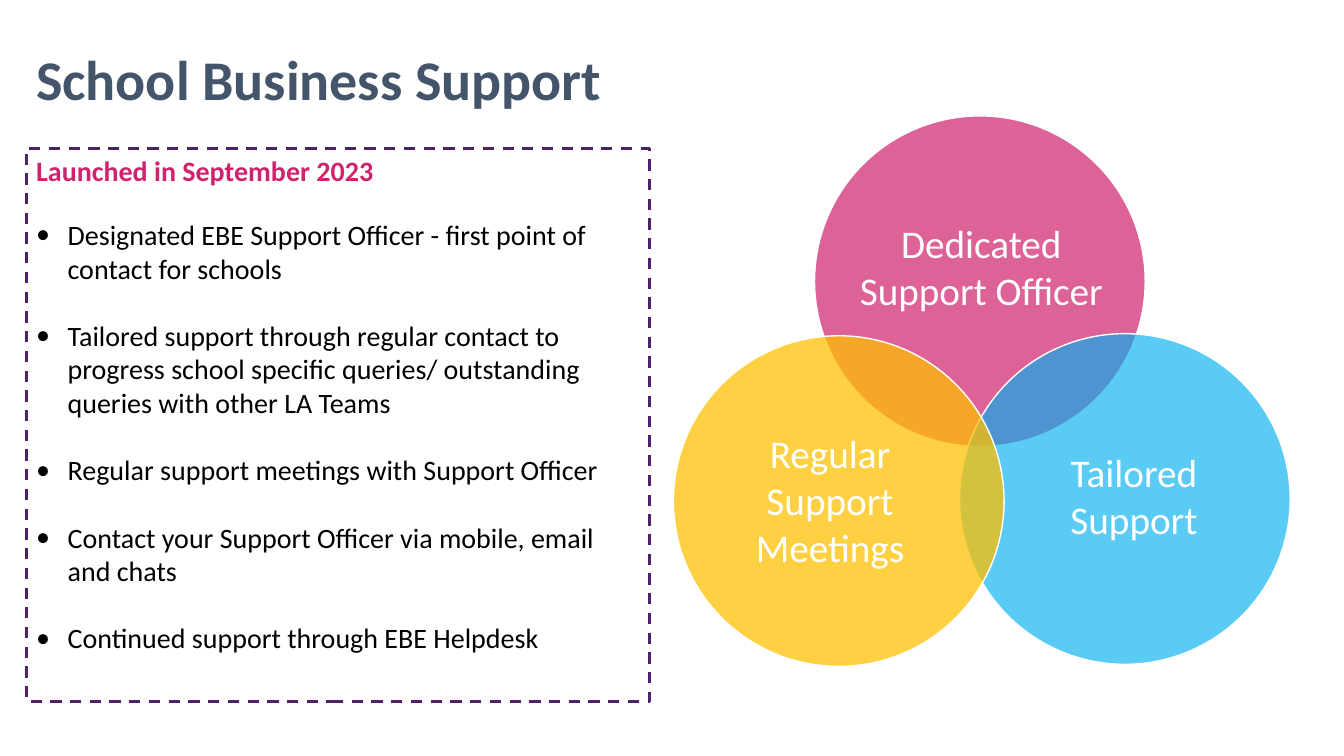
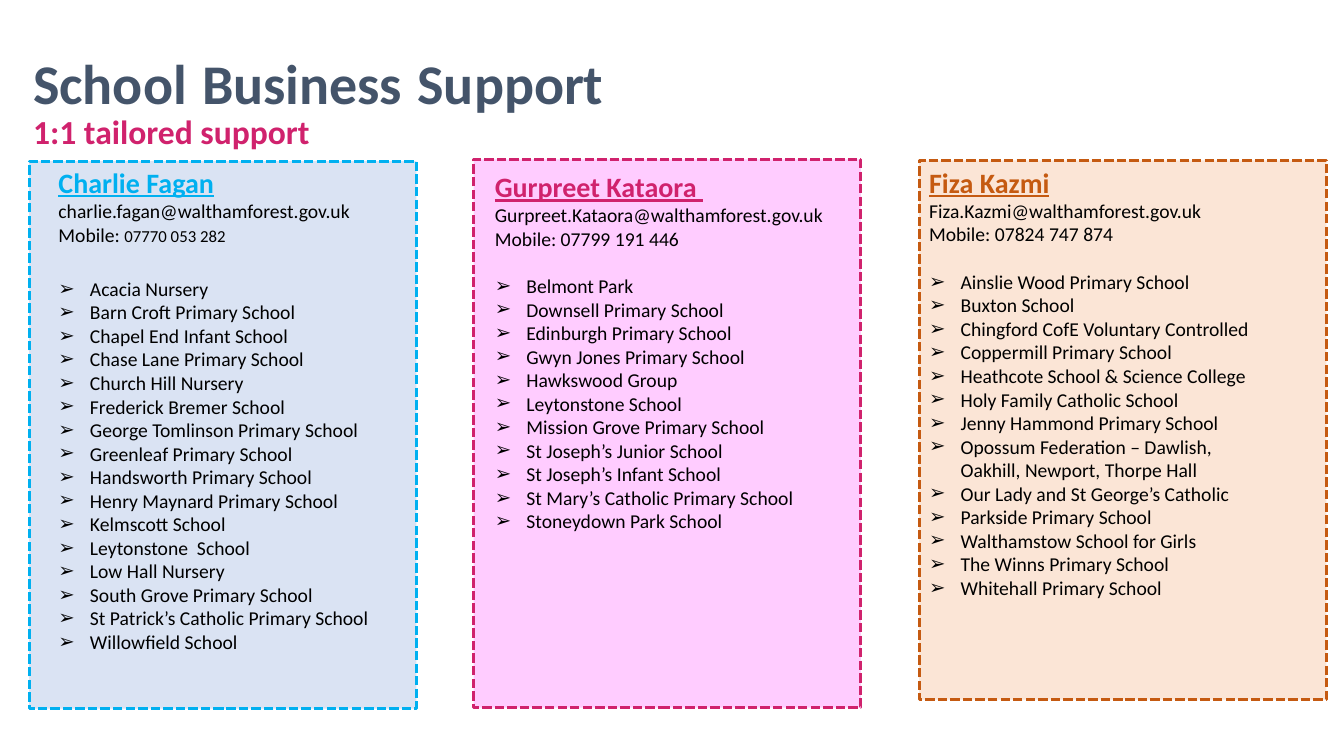
"""Build two slides on the School Business Support service and its officers."""
from dataclasses import dataclass

from lxml.etree import SubElement
from pptx import Presentation
from pptx.dml.color import RGBColor as RGB
from pptx.enum.dml import MSO_LINE as Dash
from pptx.enum.shapes import MSO_SHAPE as Preset
from pptx.enum.text import MSO_ANCHOR as Anchor, PP_ALIGN as Align
from pptx.oxml.ns import qn
from pptx.util import Pt


@dataclass(frozen=True)
class Theme:
    font: str = "Calibri"
    slate: str = "44546A"
    pink: str = "D0226D"
    blue: str = "00B0F0"
    yellow: str = "FFC000"
    purple: str = "4E226B"
    orange: str = "C55A11"
    pale_blue: str = "DAE3F3"
    pale_pink: str = "FFCCFF"
    pale_orange: str = "FBE5D6"
    white: str = "FFFFFF"
    black: str = "000000"
    title: int = 40
    title_gap: int = 48
    label: int = 28
    subtitle: int = 24
    body: int = 20
    contact: int = 14
    small: int = 12
    indent: float = 22.5


theme = Theme()


def write(frame, lines, anchor=Anchor.TOP):
    """Fill a frame with (runs, paragraph format, bullet) lines."""
    frame.word_wrap = True
    frame.vertical_anchor = anchor
    for index, (runs, paragraph_format, bullet) in enumerate(lines):
        paragraph = frame.paragraphs[0] if index == 0 else frame.add_paragraph()
        if bullet:
            properties = paragraph._p.get_or_add_pPr()
            properties.set("marL", str(Pt(theme.indent)))
            properties.set("indent", str(-Pt(theme.indent)))
            SubElement(properties, qn("a:buFont"), typeface=theme.font)
            SubElement(properties, qn("a:buChar"), char=bullet)
        for name, value in {"alignment": Align.LEFT, **paragraph_format}.items():
            setattr(paragraph, name, value)
        for text, size, color, font_format in runs:
            run = paragraph.add_run()
            run.text = text
            run.font.color.rgb = RGB.from_string(color)
            for name, value in {"name": theme.font, "size": Pt(size), **font_format}.items():
                setattr(run.font, name, value)


def draw(slide, preset, box, fill, line, width, dash=None):
    """Add a preset shape with an optional fill."""
    shape = slide.shapes.add_shape(preset, *map(Pt, box))
    shape.shadow.inherit = False
    if fill:
        shape.fill.solid()
        shape.fill.fore_color.rgb = RGB.from_string(fill)
    else:
        shape.fill.background()
    shape.line.color.rgb = RGB.from_string(line)
    shape.line.width = Pt(width)
    if dash:
        shape.line.dash_style = dash
    return shape


deck = Presentation()
deck.slide_width, deck.slide_height = Pt(960), Pt(540)
blank = deck.slide_layouts[6]
bold = {"bold": True}

overview, officers = [deck.slides.add_slide(blank) for _ in range(2)]
for slide, left, top, gap in (
    (overview, 18.7, 8.6, theme.title),
    (officers, 16.6, 9.4, theme.title_gap),
):
    title = slide.shapes.add_textbox(Pt(left), Pt(top), Pt(823.7), Pt(100))
    words = [
        (text, gap if text == " " else theme.title, theme.slate, bold)
        for text in ("School", " ", "Business", " ", "Support")
    ]
    write(title.text_frame, [(words, {"line_spacing": 0.9}, None)], Anchor.MIDDLE)

diameter = 236.2
for left, top, color, opacity in (
    (581.8, 82.8, theme.pink, 71),
    (685.4, 238.3, theme.blue, 65),
    (481, 239.8, theme.yellow, 74),
):
    circle = draw(overview, Preset.OVAL, (left, top, diameter, diameter), color, theme.white, 1)
    tint = next(circle._element.spPr.iter(qn("a:srgbClr")))
    SubElement(tint, qn("a:alpha"), val=str(opacity * 1000))

for box, label_lines in (
    ((592.6, 153.4, 216.7, 74.9), ["Dedicated Support Officer"]),
    ((496.8, 303.1, 192.2, 108.7), ["Regular Support Meetings"]),
    ((738, 316.8, 144, 74.9), ["Tailored", "Support"]),
):
    label = overview.shapes.add_textbox(*map(Pt, box))
    write(label.text_frame, [
        ([(text, theme.label, theme.white, {})], {"alignment": Align.CENTER}, None)
        for text in label_lines
    ])

offer = draw(overview, Preset.RECTANGLE, (18.7, 105.8, 445, 395.3), None, theme.purple, 2, Dash.DASH)
services = [
    "Designated EBE Support Officer - first point of contact for schools",
    "Tailored support through regular contact to progress school specific queries/ "
    "outstanding queries with other LA Teams",
    "Regular support meetings with Support Officer",
    "Contact your Support Officer via mobile, email and chats",
    "Continued support through EBE Helpdesk",
]
launch = ([("Launched in September 2023", theme.body, theme.pink, bold)], {}, None)
write(offer.text_frame, [launch] + [
    ([(text, theme.body, theme.black, {})], {"space_before": Pt(24 if index else 22)}, "•")
    for index, text in enumerate(services)
])

subtitle = officers.shapes.add_textbox(Pt(16.6), Pt(75.6), Pt(576), Pt(36))
write(subtitle.text_frame, [([("1:1 tailored support", theme.subtitle, theme.pink, bold)], {}, None)])

caseloads = [
    {
        "box": (20.9, 115.2, 276.5, 391), "inset": (20.9, 2.9, 7.2), "gap": 22,
        "fill": theme.pale_blue, "accent": theme.blue,
        "name": "Charlie Fagan", "email": "charlie.fagan@walthamforest.gov.uk",
        "mobile": "07770 053 282", "mobile_size": theme.small,
        "schools": [
            "Acacia Nursery", "Barn Croft Primary School", "Chapel End Infant School",
            "Chase Lane Primary School", "Church Hill Nursery", "Frederick Bremer School",
            "George Tomlinson Primary School", "Greenleaf Primary School",
            "Handsworth Primary School", "Henry Maynard Primary School", "Kelmscott School",
            "Leytonstone  School", "Low Hall Nursery", "South Grove Primary School",
            "St Patrick’s Catholic Primary School", "Willowfield School",
        ],
    },
    {
        "box": (338.4, 113.8, 276.5, 391.7), "inset": (15.1, 7.2, 7.2), "gap": 17,
        "fill": theme.pale_pink, "accent": theme.pink,
        "name": "Gurpreet Kataora ", "email": "Gurpreet.Kataora@walthamforest.gov.uk",
        "mobile": "07799 191 446", "mobile_size": theme.contact,
        "schools": [
            "Belmont Park", "Downsell Primary School", "Edinburgh Primary School",
            "Gwyn Jones Primary School", "Hawkswood Group", "Leytonstone School",
            "Mission Grove Primary School", "St Joseph’s Junior School",
            "St Joseph’s Infant School", "St Mary’s Catholic Primary School",
            "Stoneydown Park School",
        ],
    },
    {
        "box": (656.6, 114.5, 290.9, 385.2), "inset": (7.2, 3.6, 45), "gap": 17,
        "fill": theme.pale_orange, "accent": theme.orange,
        "name": "Fiza Kazmi", "email": "Fiza.Kazmi@walthamforest.gov.uk",
        "mobile": "07824 747 874", "mobile_size": theme.contact,
        "schools": [
            "Ainslie Wood Primary School", "Buxton School", "Chingford CofE Voluntary Controlled",
            "Coppermill Primary School", "Heathcote School & Science College",
            "Holy Family Catholic School", "Jenny Hammond Primary School",
            "Opossum Federation – Dawlish, Oakhill, Newport, Thorpe Hall",
            "Our Lady and St George’s Catholic", "Parkside Primary School",
            "Walthamstow School for Girls", "The Winns Primary School",
            "Whitehall Primary School",
        ],
    },
]
for officer in caseloads:
    card = draw(officers, Preset.RECTANGLE, officer["box"], officer["fill"],
                officer["accent"], 2.25, Dash.SQUARE_DOT)
    for side, inset in zip(("margin_left", "margin_top", "margin_right"), officer["inset"]):
        setattr(card.text_frame, side, Pt(inset))
    heading = (officer["name"], theme.body, officer["accent"], {"bold": True, "underline": True})
    email = (officer["email"], theme.contact, theme.black, {})
    mobile = [
        ("Mobile: ", theme.contact, theme.black, {}),
        (officer["mobile"], officer["mobile_size"], theme.black, {}),
    ]
    write(card.text_frame, [([heading], {}, None), ([email], {}, None), (mobile, {}, None)] + [
        ([(school, theme.contact, theme.black, {})],
         {"space_before": Pt(0 if index else officer["gap"])}, "➢")
        for index, school in enumerate(officer["schools"])
    ])

deck.save("out.pptx")
